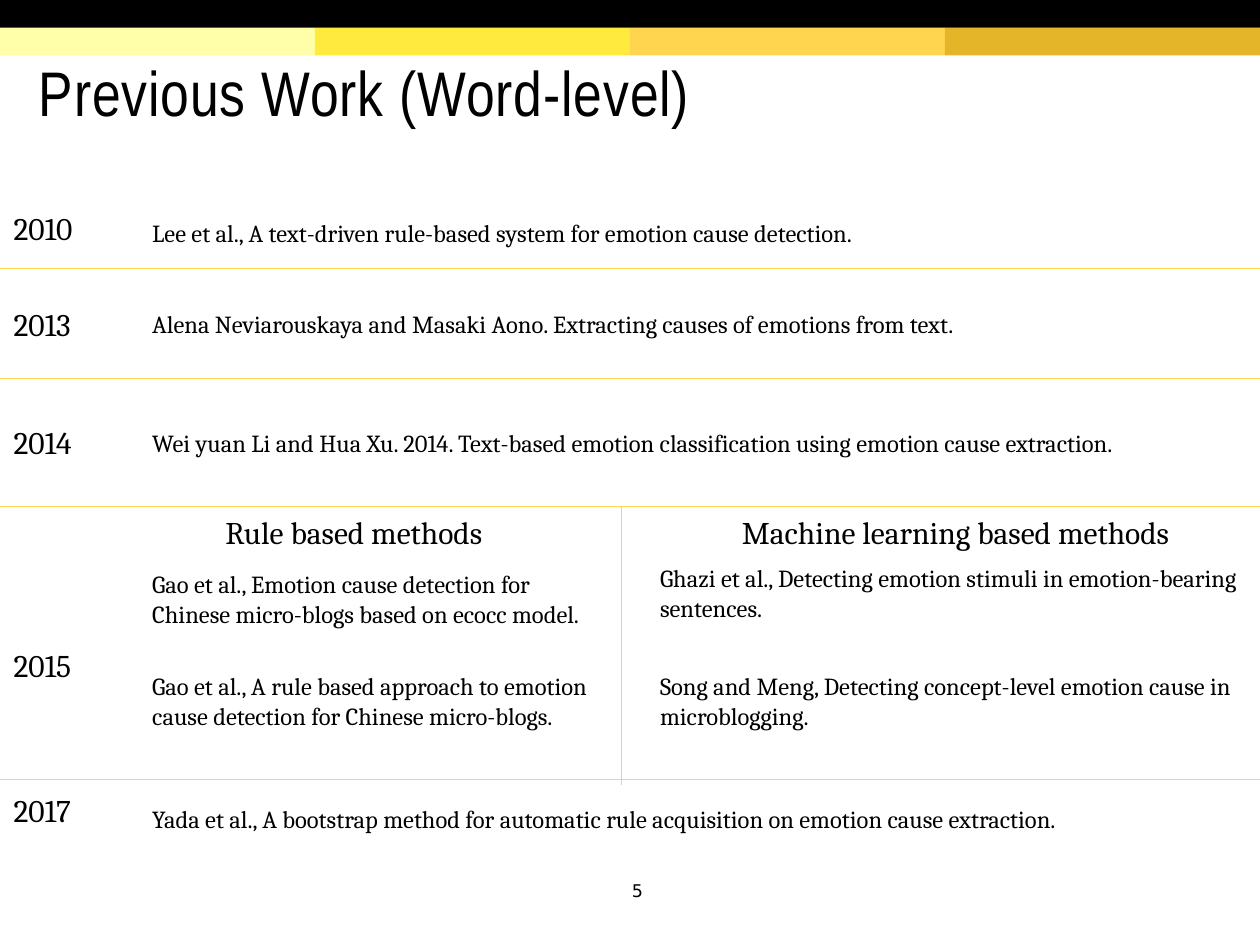
import pptx
import pptx.util
import pptx.dml.color
import pptx.enum.shapes
import pptx.enum.text
import lxml.etree

Inches, Pt = pptx.util.Inches, pptx.util.Pt
ALIGN = pptx.enum.text.PP_ALIGN
ANCHOR = pptx.enum.text.MSO_ANCHOR

THEME = {
    "ink": "000000",
    "rule": "FFD54F",
    "bands": ["FFFFAA", "FFEA3D", "FFD54F", "E4B429"],
    "title": {"name": "Arial Narrow", "size": Pt(36)},
    "heading": {"name": "Cambria", "size": Pt(18)},
    "body": {"name": "Cambria", "size": Pt(14)},
    "number": {"name": "DejaVu Sans", "size": Pt(10)},
}

TITLE = "Previous Work (Word-level)"
PAGE_NUMBER = "5"
# year, top
YEARS = [("2010", 1.61), ("2013", 2.37), ("2014", 3.31), ("2015", 5.08), ("2017", 6.23)]
# text, left, top, width
HEADINGS = [
    ("Rule based methods", 1.69, 4.02, 2.46),
    ("Machine learning based methods", 5.79, 4.02, 3.9),
]
LEFT, RIGHT = 1.11, 5.14
# text, left, top, width, height
PAPERS = [
    ("Lee et al., A text-driven rule-based system for emotion cause detection.",
     LEFT, 1.68, 6.33, 0.34),
    ("Alena Neviarouskaya and Masaki Aono. Extracting causes of emotions from text.",
     LEFT, 2.4, 8.42, 0.34),
    ("Wei yuan Li and Hua Xu. 2014. Text-based emotion classification using emotion cause extraction.",
     LEFT, 3.35, 8.65, 0.34),
    ("Gao et al., Emotion cause detection for Chinese micro-blogs based on ecocc model.",
     LEFT, 4.47, 3.63, 0.81),
    ("Gao et al., A rule based approach to emotion cause detection for Chinese micro-blogs.",
     LEFT, 5.28, 3.76, 0.81),
    ("Ghazi et al., Detecting emotion stimuli in emotion-bearing sentences.",
     RIGHT, 4.42, 5, 0.57),
    ("Song and Meng, Detecting concept-level emotion cause in microblogging.",
     RIGHT, 5.28, 4.77, 0.57),
    ("Yada et al., A bootstrap method for automatic rule acquisition on emotion cause extraction.",
     LEFT, 6.33, 8.77, 0.34),
]
ROW_RULES = [2.13, 3, 4.02, 6.19]
COLUMN_RULE = (4.93, 4.02, 4.93, 6.23)
SLIDE_W, SLIDE_H, BAND_H = 10, 7.5, 0.22


def rgb(value):
    return pptx.dml.color.RGBColor.from_string(value)


def add_bar(s, left, top, width, color):
    sp = s.shapes.add_shape(pptx.enum.shapes.MSO_SHAPE.RECTANGLE,
                            Inches(left), Inches(top), Inches(width), Inches(BAND_H))
    sp.shadow.inherit = False
    sp.fill.solid()
    sp.fill.fore_color.rgb = rgb(color)
    sp.line.fill.background()


def add_rule(s, *ends):
    line = s.shapes.add_connector(pptx.enum.shapes.MSO_CONNECTOR.STRAIGHT,
                                  *[Inches(v) for v in ends])
    line.line.color.rgb = rgb(THEME["rule"])
    line.line.width = Pt(0.5)
    lxml.etree.SubElement(line._element.spPr, pptx.oxml.ns.qn("a:effectLst"))


def add_text(s, text, style, left, top, width, height, wrap=True):
    sp = s.shapes.add_textbox(Inches(left), Inches(top), Inches(width), Inches(height))
    tf = sp.text_frame
    tf.word_wrap = wrap
    p = tf.paragraphs[0]
    r = p.add_run()
    r.text = text
    for key, value in THEME[style].items():
        setattr(r.font, key, value)
    r.font.color.rgb = rgb(THEME["ink"])
    return tf, p, r


def main():
    prs = pptx.Presentation()
    prs.slide_width, prs.slide_height = Inches(SLIDE_W), Inches(SLIDE_H)
    s = prs.slides.add_slide(prs.slide_layouts[6])

    band_w = SLIDE_W / len(THEME["bands"])
    for i, color in enumerate(THEME["bands"]):
        add_bar(s, i * band_w, BAND_H, band_w, color)
    add_bar(s, 0, 0, SLIDE_W, THEME["ink"])

    for y in ROW_RULES:
        add_rule(s, 0, y, SLIDE_W, y)
    add_rule(s, *COLUMN_RULE)

    tf, p, r = add_text(s, TITLE, "title", 0.21, 0.47, 9.49, 0.98)
    p.line_spacing = 0.85
    r.font._element.set("spc", "50")

    for year, top in YEARS:
        add_text(s, year, "heading", 0.01, top, 0.75, 0.4, wrap=False)
    for text, left, top, width in HEADINGS:
        add_text(s, text, "heading", left, top, width, 0.4, wrap=False)
    for text, *box in PAPERS:
        add_text(s, text, "body", *box)

    tf, p, r = add_text(s, PAGE_NUMBER, "number", 4.58, 6.93, 0.96, 0.27)
    tf.vertical_anchor = ANCHOR.MIDDLE
    p.alignment = ALIGN.CENTER

    prs.save("out.pptx")


if __name__ == "__main__":
    main()
